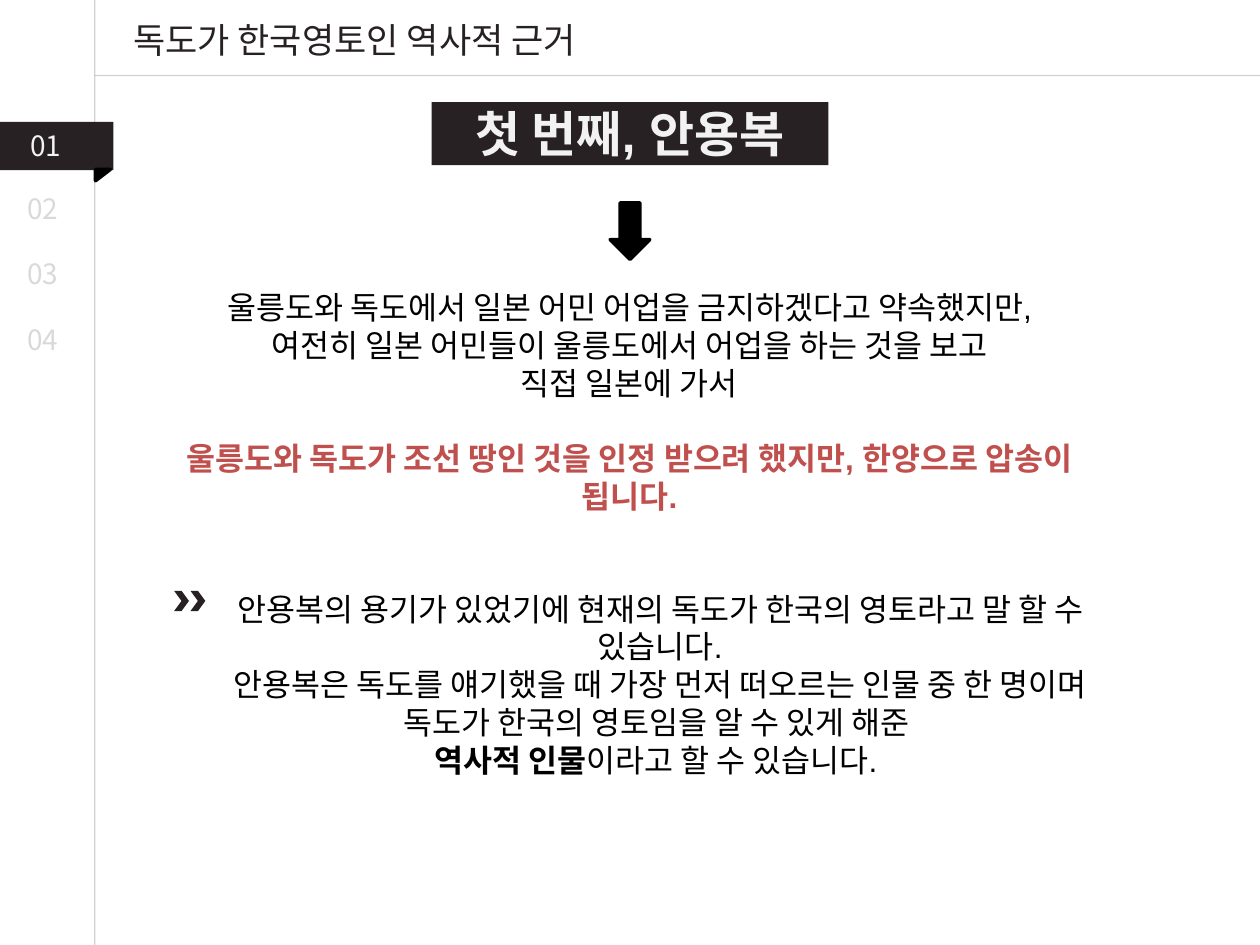
from lxml.etree import SubElement
from pptx import Presentation
from pptx.dml.color import RGBColor
from pptx.enum.shapes import MSO_CONNECTOR, MSO_SHAPE
from pptx.enum.text import PP_ALIGN
from pptx.oxml.ns import qn
from pptx.util import Cm, Pt

KOREAN = "Noto Sans CJK KR"
INK, BLACK, PALE, GREY, RED = "272123", "000000", "F2F2F2", "D9D9D9", "C0504D"
WIDTH, HEIGHT = 25.4, 19.05


def color(hex_string):
    return RGBColor.from_string(hex_string)


def add_block(page, preset, box, fill, outline=None):
    left, top, width, height = box
    block = page.shapes.add_shape(preset, Cm(left), Cm(top), Cm(width), Cm(height))
    block.shadow.inherit = False
    block.fill.solid()
    block.fill.fore_color.rgb = color(fill)
    if outline:
        block.line.color.rgb = color(outline)
        block.line.width = Pt(2)
    else:
        block.line.fill.background()
    return block


def add_rule(page, start, end):
    """Thin, half transparent grey line."""
    points = [Cm(value) for value in (*start, *end)]
    rule = page.shapes.add_connector(MSO_CONNECTOR.STRAIGHT, *points)
    rule.line.color.rgb = color("A6A6A6")
    rule.line.width = Pt(0.75)
    properties = rule._element.spPr
    tint = properties.find(".//" + qn("a:srgbClr"))
    SubElement(tint, qn("a:alpha"), val="50000")
    SubElement(properties, qn("a:effectLst"))


def add_text(page, box, paragraphs, size, ink, font="Arial", align=PP_ALIGN.CENTER):
    """Each paragraph is a list of (text, bold, colour or None) spans."""
    left, top, width, height = box
    label = page.shapes.add_textbox(Cm(left), Cm(top), Cm(width), Cm(height))
    frame = label.text_frame
    frame.word_wrap = True
    for index, spans in enumerate(paragraphs):
        para = frame.add_paragraph() if index else frame.paragraphs[0]
        para.alignment = align
        for text, bold, tone in spans:
            span = para.add_run()
            span.text = text
            span.font.size = Pt(size)
            span.font.bold = bold
            span.font.name = font
            span.font.color.rgb = color(tone or ink)
            SubElement(span.font._element, qn("a:ea"), typeface=KOREAN)
    return frame


def plain(text):
    return [(text, False, None)]


def add_header(page, left, top, width, height):
    add_rule(page, (left, 0), (left, HEIGHT))
    add_rule(page, (left + width, top + height), (left, top + height))
    add_text(page, (left - 0.16, top + 0.25, 10.8, 1.12),
             [plain("독도가 한국영토인 역사적 근거")], 20, INK, KOREAN)


def add_navigation(page, left, top, width):
    # Active tab with its folded corner
    add_block(page, MSO_SHAPE.RECTANGLE, (left, top, width, 0.97), INK)
    fold = add_block(page, MSO_SHAPE.RIGHT_TRIANGLE,
                     (left + 1.96, top + 0.92, 0.23, 0.3), BLACK, BLACK)
    fold.rotation = 90
    add_text(page, (left + 0.36, top, 1.5, 0.94), [plain("01")],
             16, PALE, KOREAN, PP_ALIGN.LEFT)
    # Remaining section numbers
    for index, number in enumerate(("02", "03", "04")):
        add_text(page, (left + 0.3, top + 1.27 + 1.32 * index, 1.24, 0.94),
                 [plain(number)], 16, GREY, KOREAN, PP_ALIGN.LEFT)


def add_title(page, left, top, width, height):
    add_block(page, MSO_SHAPE.RECTANGLE, (left, top, width, height), INK)
    add_text(page, (left + 0.2, top - 0.1, width - 0.4, height + 0.18),
             [[("첫 번째, 안용복", True, None)]], 28, PALE)
    # Arrow leading to the story
    add_block(page, MSO_SHAPE.DOWN_ARROW,
              (left + width / 2 - 0.4, top + 2.03, 0.8, 1.14), BLACK, BLACK)


def add_story(page, left, top, width, height):
    frame = add_text(page, (left, top, width, height), [
        plain("울릉도와 독도에서 일본 어민 어업을 금지하겠다고 약속했지만,"),
        plain("여전히 일본 어민들이 울릉도에서 어업을 하는 것을 보고"),
        plain("직접 일본에 가서"),
        [("울릉도와 독도가 조선 땅인 것을 인정 받으려 했지만, 한양으로 압송이 됩니다.", True, RED)],
    ], 18, BLACK)
    frame.paragraphs[-1].space_before = Pt(21.5)


def add_conclusion(page, left, top, width, height):
    add_text(page, (left + 0.48, top, width - 0.48, height), [
        plain("안용복의 용기가 있었기에 현재의 독도가 한국의 영토라고 말 할 수 있습니다."),
        plain("안용복은 독도를 얘기했을 때 가장 먼저 떠오르는 인물 중 한 명이며 "
              "독도가 한국의 영토임을 알 수 있게 해준 "),
        [("역사적 인물", True, None), ("이라고 할 수 있습니다. ", False, None)],
    ], 18, BLACK)
    # Double chevron marker
    for offset in (0.33, 0):
        add_block(page, MSO_SHAPE.CHEVRON, (left + offset, top + 0.15, 0.3, 0.41), INK)


def main():
    deck = Presentation()
    deck.slide_width, deck.slide_height = Cm(WIDTH), Cm(HEIGHT)
    page = deck.slides.add_slide(deck.slide_layouts[6])
    add_title(page, 8.7, 2.06, 8, 1.27)
    add_header(page, 1.91, 0, WIDTH - 1.91, 1.52)
    add_navigation(page, 0, 2.46, 2.29)
    add_story(page, 3.38, 5.69, 18.62, 5.64)
    add_conclusion(page, 3.51, 11.76, 19.12, 4.78)
    deck.save("out.pptx")


if __name__ == "__main__":
    main()
